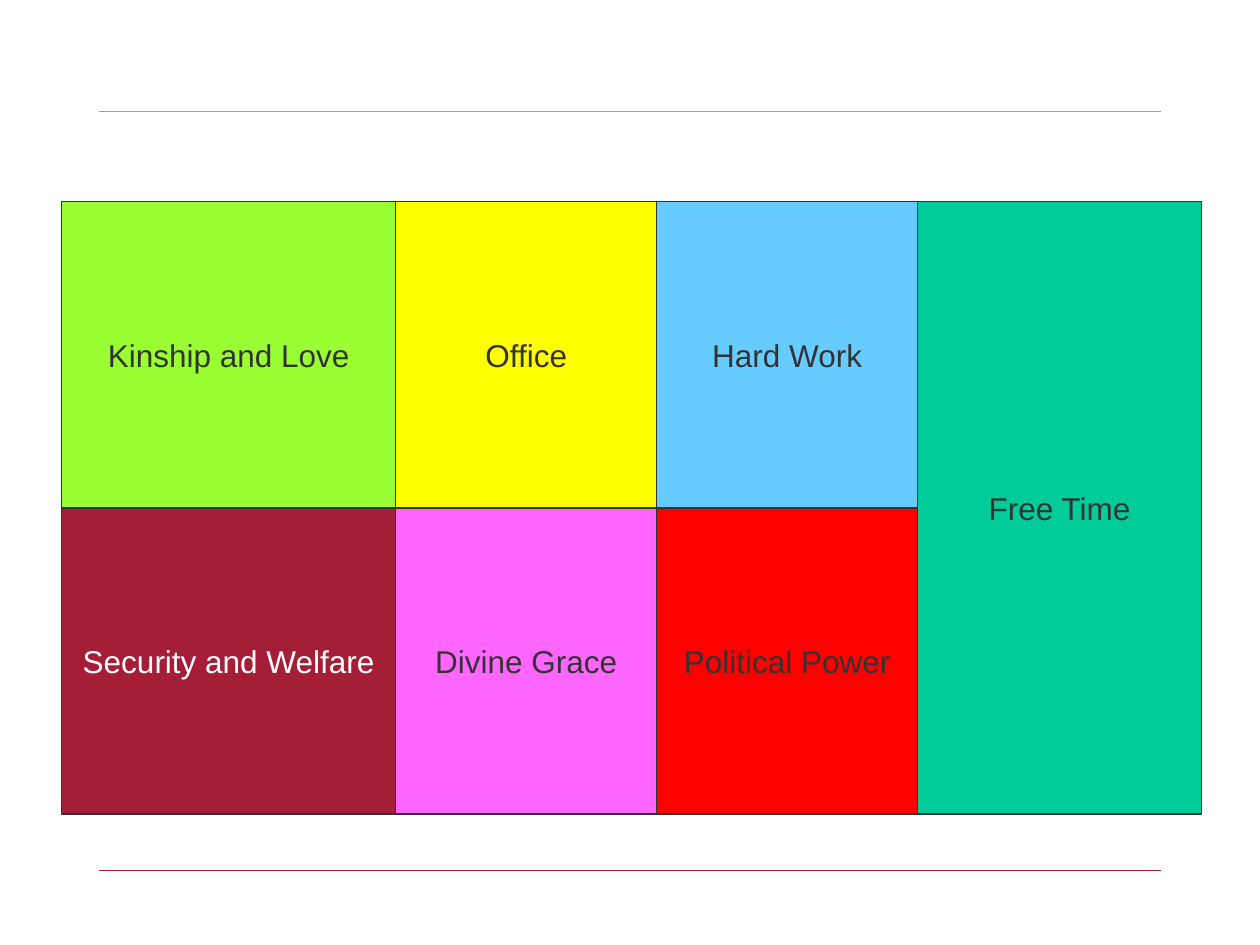
from lxml.etree import SubElement
from pptx import Presentation
from pptx.dml.color import RGBColor
from pptx.enum.shapes import MSO_CONNECTOR, MSO_SHAPE
from pptx.enum.text import MSO_ANCHOR, PP_ALIGN
from pptx.oxml.ns import qn
from pptx.util import Cm, Pt

DARK = RGBColor(0x33, 0x33, 0x33)
WHITE = RGBColor(0xFF, 0xFF, 0xFF)
GOLD = RGBColor(0xB4, 0xA0, 0x69)
WINE = RGBColor(0xA5, 0x1E, 0x37)
LIME = RGBColor(0x99, 0xFF, 0x33)
YELLOW = RGBColor(0xFF, 0xFF, 0x00)
SKY = RGBColor(0x66, 0xCC, 0xFF)
GREEN = RGBColor(0x00, 0xCC, 0x99)
PINK = RGBColor(0xFF, 0x66, 0xFF)
RED = RGBColor(0xFF, 0x00, 0x00)

WIDTHS = (6.74, 5.26, 5.26, 5.72)
# Label, column, row, rows spanned, fill, text colour
CELLS = (
    ("Kinship and Love", 0, 0, 1, LIME, DARK),
    ("Office", 1, 0, 1, YELLOW, DARK),
    ("Free Time", 3, 0, 2, GREEN, DARK),
    ("Divine Grace", 1, 1, 1, PINK, DARK),
    ("Political Power", 2, 1, 1, RED, DARK),
    ("Hard Work", 2, 0, 1, SKY, DARK),
    ("Security and Welfare", 0, 1, 1, WINE, WHITE),
)


def write(shape, text, size=18, color=DARK, font="Arial"):
    frame = shape.text_frame
    frame.word_wrap = False
    frame.vertical_anchor = MSO_ANCHOR.MIDDLE
    para = frame.paragraphs[0]
    para.alignment = PP_ALIGN.CENTER
    run = para.add_run()
    run.text = text
    run.font.size = Pt(size)
    run.font.name = font
    run.font.color.rgb = color


def add_rule(slide, left, top, width, color):
    rule = slide.shapes.add_connector(
        MSO_CONNECTOR.STRAIGHT, Cm(left), Cm(top), Cm(left + width), Cm(top))
    rule.line.color.rgb = color
    rule.line.width = Pt(0.75)
    SubElement(rule._element.spPr, qn("a:effectLst"))


def add_grid(slide, left, top, height):
    """Place the coloured cells in two rows of equal height."""
    step = height / 2
    for text, col, row, span, fill, color in CELLS:
        cell = slide.shapes.add_shape(
            MSO_SHAPE.RECTANGLE,
            Cm(left + sum(WIDTHS[:col])), Cm(top + row * step),
            Cm(WIDTHS[col]), Cm(span * step))
        cell.shadow.inherit = False
        cell.fill.solid()
        cell.fill.fore_color.rgb = fill
        cell.line.color.rgb = DARK
        cell.line.width = Pt(0.75)
        write(cell, text, color=color)


def main():
    deck = Presentation()
    deck.slide_width, deck.slide_height = Cm(25.4), Cm(19.05)
    slide = deck.slides.add_slide(deck.slide_layouts[6])
    add_rule(slide, 2, 2.25, 21.4, GOLD)
    add_rule(slide, 2, 17.55, 21.4, WINE)
    add_grid(slide, 1.24, 4.07, 12.34)
    deck.save("out.pptx")


if __name__ == "__main__":
    main()
